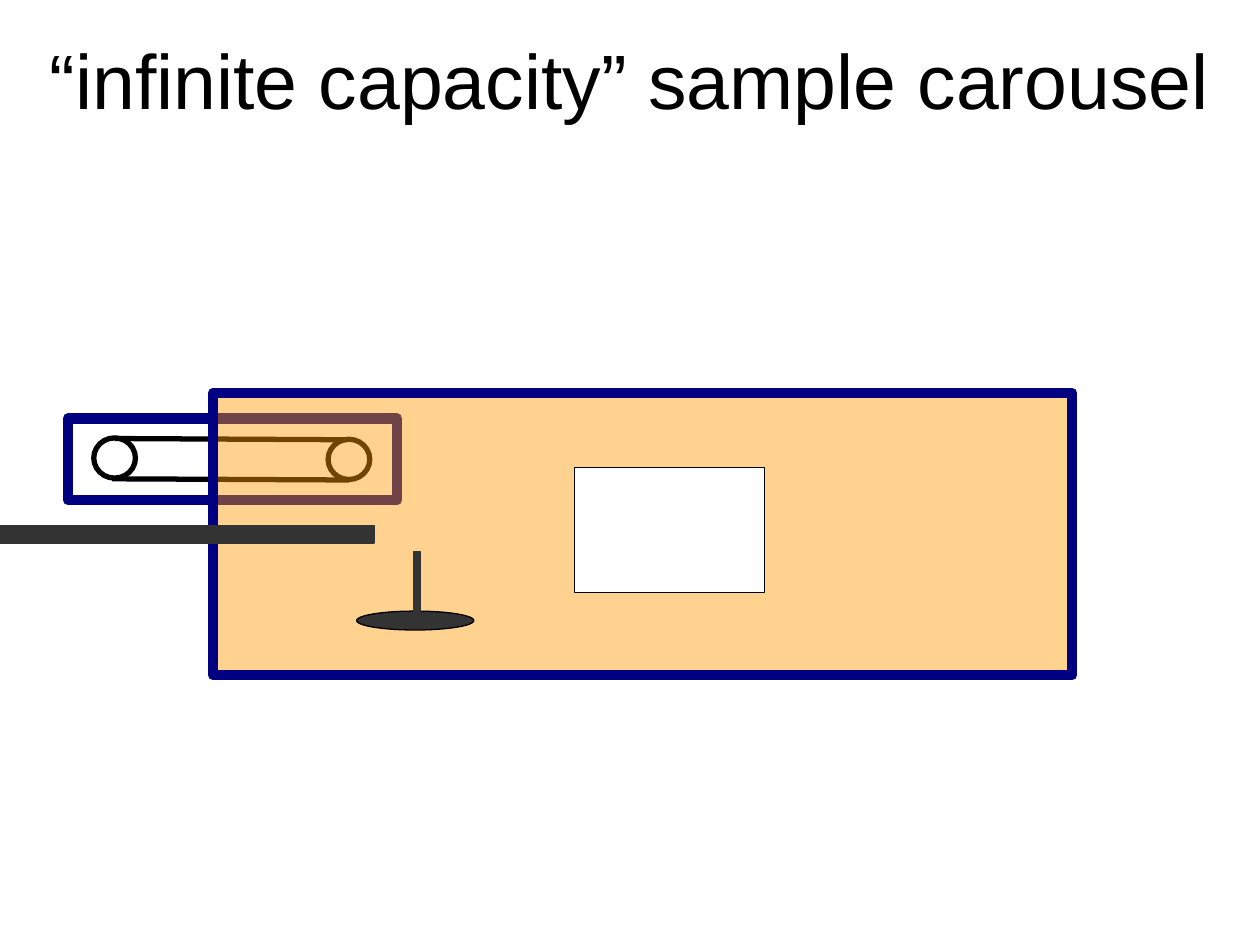
from lxml.etree import SubElement
from pptx import Presentation
from pptx.dml.color import RGBColor
from pptx.enum.shapes import MSO_CONNECTOR, MSO_SHAPE
from pptx.enum.text import MSO_ANCHOR, PP_ALIGN
from pptx.oxml.ns import qn
from pptx.util import Pt

BLACK = RGBColor(0x00, 0x00, 0x00)
WHITE = RGBColor(0xFF, 0xFF, 0xFF)
NAVY = RGBColor(0x00, 0x00, 0x80)
ORANGE = RGBColor(0xFF, 0x99, 0x00)
CHARCOAL = RGBColor(0x33, 0x33, 0x33)

SLIDE_SIZE = (720, 540)
TITLE = "“infinite capacity” sample carousel"
TITLE_BOX = (0, 0, 720, 90)
TITLE_FONT = {"name": "Arial", "size": Pt(44)}

RECT, OVAL = MSO_SHAPE.RECTANGLE, MSO_SHAPE.OVAL
# preset, (left, top, width, height), fill, line colour, line width
CAROUSEL = [
    (RECT, (109.4, 168.5, 46.8, 187.9), WHITE, NAVY, 6),
    (OVAL, (54, 249.8, 23, 23.8), None, BLACK, 3),
    (OVAL, (187.9, 250.6, 23, 23.8), None, BLACK, 3),
]
# start x, start y, end x, end y
BELT = [(65.5, 250.6, 198, 251.3), (64.1, 273.6, 199.4, 274.3)]
CHAMBER = (RECT, (121.7, 224.6, 491, 161.3), ORANGE, NAVY, 6)
CHAMBER_OPACITY = 44
ARM = (RECT, (0, 300.2, 213.8, 10.1), CHARCOAL, CHARCOAL, 0.75)
STAND = [
    (OVAL, (203.8, 349.2, 67, 10.8), CHARCOAL, BLACK, 0.75),
    (RECT, (236.2, 315.4, 4.3, 38.2), CHARCOAL, CHARCOAL, 0.75),
]
WINDOW = (RECT, (328.3, 267.1, 108.7, 71.3), WHITE, BLACK, 0.75)


def add_part(shapes, preset, box, fill, line_color, line_width, rotation=0):
    part = shapes.add_shape(preset, *map(Pt, box))
    part.shadow.inherit = False
    part.rotation = rotation
    if fill is None:
        part.fill.background()
    else:
        part.fill.solid()
        part.fill.fore_color.rgb = fill
    part.line.color.rgb = line_color
    part.line.width = Pt(line_width)
    return part


def add_belt(shapes, ends):
    belt = shapes.add_connector(MSO_CONNECTOR.STRAIGHT, *map(Pt, ends))
    belt.line.color.rgb = BLACK
    belt.line.width = Pt(3)
    SubElement(belt._element.spPr, qn("a:effectLst"))


def set_opacity(part, percent):
    color = part.fill._xPr.find(qn("a:solidFill"))[0]
    SubElement(color, qn("a:alpha")).set("val", str(percent * 1000))


def add_title(shapes):
    title = shapes.add_textbox(*map(Pt, TITLE_BOX))
    frame = title.text_frame
    frame.word_wrap = True
    frame.vertical_anchor = MSO_ANCHOR.MIDDLE
    paragraph = frame.paragraphs[0]
    paragraph.text = TITLE
    paragraph.alignment = PP_ALIGN.CENTER
    font = paragraph.runs[0].font
    for attribute, value in TITLE_FONT.items():
        setattr(font, attribute, value)
    font.color.rgb = BLACK


def main():
    presentation = Presentation()
    presentation.slide_width, presentation.slide_height = map(Pt, SLIDE_SIZE)
    shapes = presentation.slides.add_slide(presentation.slide_layouts[6]).shapes

    for part in CAROUSEL:
        add_part(shapes, *part, rotation=270)
    for ends in BELT:
        add_belt(shapes, ends)
    set_opacity(add_part(shapes, *CHAMBER), CHAMBER_OPACITY)
    add_part(shapes, *ARM)
    add_title(shapes)
    stand = shapes.add_group_shape()
    for part in STAND:
        add_part(stand.shapes, *part)
    add_part(shapes, *WINDOW)

    presentation.save("out.pptx")


if __name__ == "__main__":
    main()
